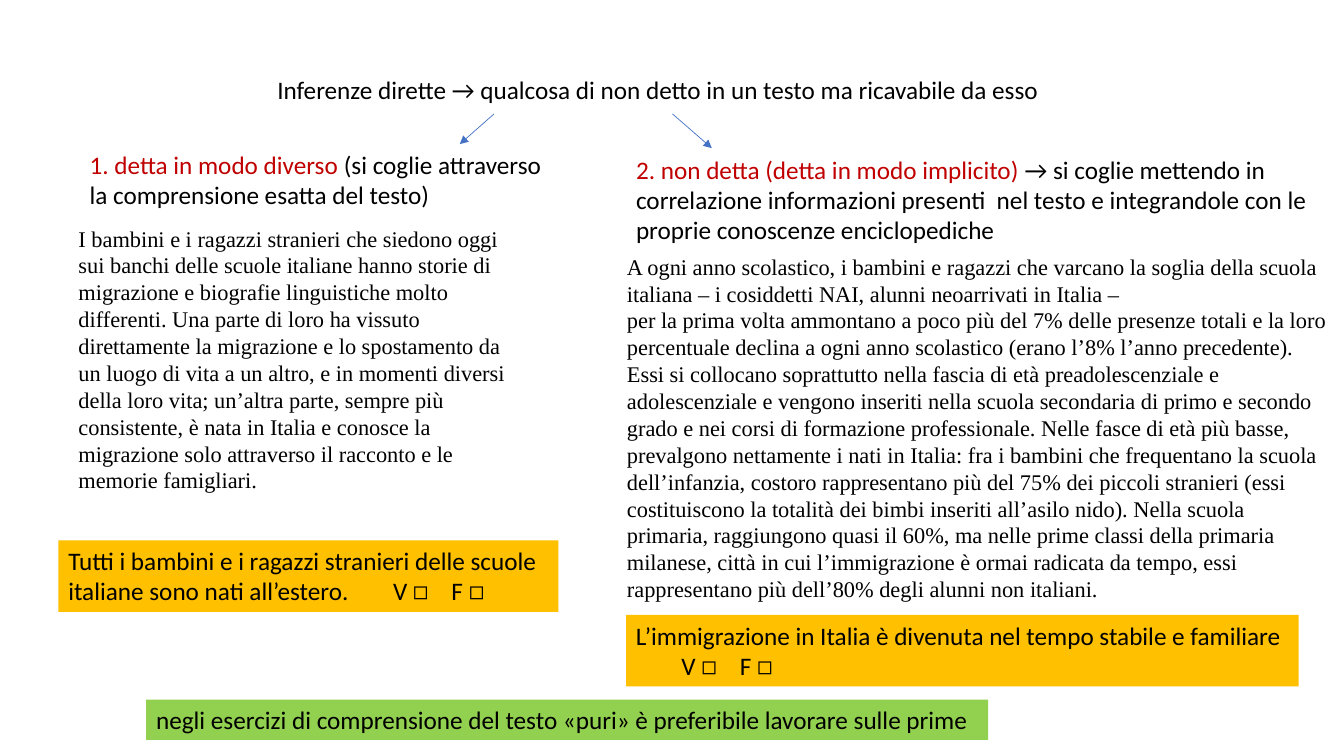
"""Build the slide on direct inferences: two kinds, a sample text and a question for each."""
from dataclasses import dataclass

from lxml import etree
from pptx import Presentation
from pptx.dml.color import RGBColor
from pptx.enum.shapes import MSO_CONNECTOR, MSO_SHAPE
from pptx.enum.text import MSO_ANCHOR, MSO_AUTO_SIZE, PP_ALIGN
from pptx.oxml.ns import qn
from pptx.util import Pt

PX = 9144
LEFT = PP_ALIGN.LEFT
TOP = MSO_ANCHOR.TOP
NO_AUTOFIT = MSO_AUTO_SIZE.NONE
RECTANGLE = MSO_SHAPE.RECTANGLE
STRAIGHT = MSO_CONNECTOR.STRAIGHT

BLACK, RED, BLUE = "000000", "C00000", "4472C4"
AMBER, GREEN = "FFC000", "92D050"
SANS, SERIF = "Calibri", "Times New Roman"


@dataclass(frozen=True)
class Phrase:
    text: str
    color: str = BLACK


@dataclass(frozen=True)
class Passage:
    box: tuple[int, int, int, int]
    paragraphs: list[list[Phrase]]
    font: str = SANS
    size: int = 18
    fill: str | None = None
    tabs: tuple[int, ...] = ()


@dataclass(frozen=True)
class Arrow:
    start: tuple[int, int]
    end: tuple[int, int]


HEADING = Passage((265, 69, 786, 40), [[
    Phrase("Inferenze dirette → qualcosa di non detto in un testo ma ricavabile da esso")]])

PASSAGES = [
    Passage((79, 143, 479, 71), [
        [Phrase("1. detta in modo diverso ", RED), Phrase("(si coglie attraverso")],
        [Phrase("la comprensione esatta del testo)")]]),
    Passage((621, 148, 699, 101), [
        [Phrase("2. non detta (detta in modo implicito) ", RED),
         Phrase("→ si coglie mettendo in correlazione informazioni presenti  nel testo "
                "e integrandole con le proprie conoscenze enciclopediche")]]),
    Passage((68, 218, 465, 279), [[Phrase(
        "I bambini e i ragazzi stranieri che siedono oggi sui banchi delle scuole italiane "
        "hanno storie di migrazione e biografie linguistiche molto differenti. Una parte di "
        "loro ha vissuto direttamente la migrazione e lo spostamento da un luogo di vita a un "
        "altro, e in momenti diversi della loro vita; un’altra parte, sempre più consistente, "
        "è nata in Italia e conosce la migrazione solo attraverso il racconto e le memorie "
        "famigliari.")]], SERIF, 16),
    Passage((58, 536, 496, 71), [
        [Phrase("Tutti i bambini e i ragazzi stranieri delle scuole")],
        [Phrase("italiane sono nati all’estero.\tV ◻︎\tF ◻︎")]],
        fill=AMBER, tabs=(322, 380)),
    Passage((612, 246, 716, 390), [
        [Phrase("A ogni anno scolastico, i bambini e ragazzi che varcano la soglia della scuola "
                "italiana – i cosiddetti NAI, alunni neoarrivati in Italia –")],
        [Phrase("per la prima volta ammontano a poco più del 7% delle presenze totali e la loro "
                "percentuale declina a ogni anno scolastico (erano l’8% l’anno precedente). "
                "Essi si collocano soprattutto nella fascia di età preadolescenziale e "
                "adolescenziale e vengono inseriti nella scuola secondaria di primo e secondo "
                "grado e nei corsi di formazione professionale. "),
         Phrase("Nelle fasce di età più basse, "
                "prevalgono nettamente i nati in Italia: fra i bambini che frequentano la scuola "
                "dell’infanzia, costoro rappresentano più del 75% dei piccoli stranieri (essi "
                "costituiscono la totalità dei bimbi inseriti all’asilo nido). Nella scuola "
                "primaria, raggiungono quasi il 60%, ma nelle prime classi della primaria "
                "milanese, città in cui l’immigrazione è ormai radicata da tempo, essi "
                "rappresentano più dell’80% degli alunni non italiani.")]], SERIF, 16),
    Passage((621, 610, 667, 71), [
        [Phrase("L’immigrazione in Italia è divenuta nel tempo stabile e familiare")],
        [Phrase("\tV ◻︎\tF ◻︎")]],
        fill=AMBER, tabs=(45, 103)),
    Passage((145, 694, 835, 40), [[Phrase(
        "negli esercizi di comprensione del testo «puri» è preferibile lavorare sulle prime")]],
        fill=GREEN),
]

ARROWS = [Arrow((490, 113), (456, 143)), Arrow((667, 113), (706, 147))]


def px(length: int) -> int:
    """Turn px into EMU."""
    return length * PX


def rgb(color: str) -> RGBColor:
    """Turn a hex string into a colour."""
    return RGBColor.from_string(color)


def add_tabs(paragraph, stops: tuple[int, ...]) -> None:
    """Give a paragraph left tab stops."""
    tab_list = etree.SubElement(paragraph._p.get_or_add_pPr(), qn("a:tabLst"))
    for stop in stops:
        etree.SubElement(tab_list, qn("a:tab"), pos=str(px(stop)), algn="l")


def write_passage(shape, passage: Passage) -> None:
    """Fill a shape with the runs of a passage."""
    frame = shape.text_frame
    frame.word_wrap = True
    frame.auto_size = NO_AUTOFIT
    frame.vertical_anchor = TOP
    for index, phrases in enumerate(passage.paragraphs):
        paragraph = frame.add_paragraph() if index else frame.paragraphs[0]
        paragraph.alignment = LEFT
        if passage.tabs:
            add_tabs(paragraph, passage.tabs)
        for phrase in phrases:
            run = paragraph.add_run()
            run.text = phrase.text
            run.font.name = passage.font
            run.font.size = Pt(passage.size)
            run.font.color.rgb = rgb(phrase.color)


def draw_heading(slide, heading: Passage) -> None:
    """Move and fill the title placeholder."""
    title = slide.shapes.title
    title.left, title.top, title.width, title.height = map(px, heading.box)
    write_passage(title, heading)


def draw_passage(slide, passage: Passage) -> None:
    """Draw a passage as a text box or as a filled rectangle."""
    box = map(px, passage.box)
    if passage.fill:
        shape = slide.shapes.add_shape(RECTANGLE, *box)
        shape.shadow.inherit = False
        shape.fill.solid()
        shape.fill.fore_color.rgb = rgb(passage.fill)
        shape.line.fill.background()
    else:
        shape = slide.shapes.add_textbox(*box)
    write_passage(shape, passage)


def draw_arrow(slide, arrow: Arrow) -> None:
    """Draw a thin arrow without a shadow."""
    connector = slide.shapes.add_connector(STRAIGHT, *map(px, arrow.start + arrow.end))
    connector.line.color.rgb = rgb(BLUE)
    connector.line.width = Pt(0.5)
    etree.SubElement(connector.line._get_or_add_ln(), qn("a:tailEnd"), type="triangle")
    etree.SubElement(connector._element.spPr, qn("a:effectLst"))


def main() -> None:
    """Build and save the slide."""
    presentation = Presentation()
    presentation.slide_width, presentation.slide_height = px(1333), px(750)
    slide = presentation.slides.add_slide(presentation.slide_layouts[5])
    draw_heading(slide, HEADING)
    for arrow in ARROWS:
        draw_arrow(slide, arrow)
    for passage in PASSAGES:
        draw_passage(slide, passage)
    presentation.save("out.pptx")


if __name__ == "__main__":
    main()
